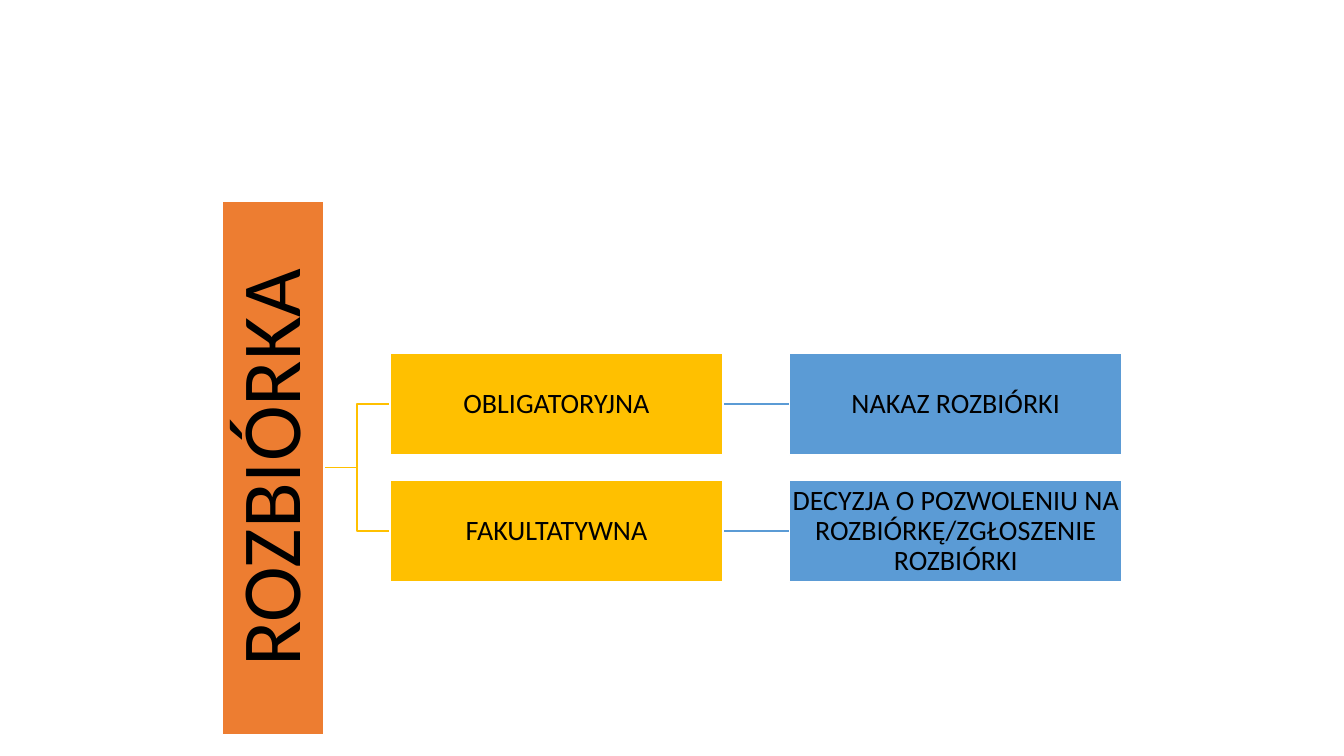
"""Build the slide with the tree of demolition types."""
from dataclasses import dataclass

import pptx
import pptx.chart.data
import pptx.dml.color
import pptx.enum.shapes
import pptx.enum.text
import pptx.oxml.ns
import pptx.util
from lxml import etree
from pptx.util import Inches

HUES = {"root": "ED7D31", "kind": "FFC000", "act": "5B9BD5",
        "edge": "FFFFFF", "text": "000000"}
WIDE, HIGH = 3.3, 1.01
KIND_X, ACT_X = 3.87, 7.83
ROOT_X, ROOT_Y, ROOT_LEN = 2.71, 4.64, 5.29
FIRST, STEP = 4.01, 1.26


@dataclass
class Box:
    """A filled box placed by its centre."""
    text: str
    hue: str
    x: float
    y: float
    wide: float = WIDE
    size: int = 20
    pad: float = 0.01
    turn: int = 0


@dataclass
class Branch:
    """A kind of demolition and the act that orders it."""
    kind: str
    act: str


BRANCHES = [
    Branch("OBLIGATORYJNA", "NAKAZ ROZBIÓRKI"),
    Branch("FAKULTATYWNA",
           "DECYZJA O POZWOLENIU NA ROZBIÓRKĘ/ZGŁOSZENIE ROZBIÓRKI"),
]


def rgb(hue: str) -> pptx.dml.color.RGBColor:
    """Return the named colour."""
    return pptx.dml.color.RGBColor.from_string(HUES[hue])


def draw_box(slide: pptx.slide.Slide, box: Box) -> pptx.shapes.autoshape.Shape:
    """Draw a box with centred text."""
    shape = slide.shapes.add_shape(
        pptx.enum.shapes.MSO_SHAPE.RECTANGLE,
        Inches(box.x - box.wide / 2), Inches(box.y - HIGH / 2),
        Inches(box.wide), Inches(HIGH))
    shape.rotation = box.turn
    shape.shadow.inherit = False
    shape.fill.solid()
    shape.fill.fore_color.rgb = rgb(box.hue)
    shape.line.color.rgb = rgb("edge")
    shape.line.width = pptx.util.Pt(1)
    frame = shape.text_frame
    frame.text = box.text
    frame.word_wrap = True
    frame.vertical_anchor = pptx.enum.text.MSO_ANCHOR.MIDDLE
    frame.margin_left = frame.margin_right = Inches(box.pad)
    frame.margin_top = frame.margin_bottom = Inches(box.pad)
    line = frame.paragraphs[0]
    line.alignment = pptx.enum.text.PP_ALIGN.CENTER
    line.line_spacing = 0.9
    font = line.runs[0].font
    font.name = "Calibri"
    font.size = pptx.util.Pt(box.size)
    font.color.rgb = rgb("text")
    return shape


def draw_link(slide: pptx.slide.Slide, form: pptx.enum.shapes.MSO_CONNECTOR,
              hue: str, x1: float, y1: float, x2: float,
              y2: float) -> pptx.shapes.connector.Connector:
    """Draw a thin link between two points."""
    link = slide.shapes.add_connector(
        form, Inches(x1), Inches(y1), Inches(x2), Inches(y2))
    link.line.color.rgb = rgb(hue)
    link.line.width = pptx.util.Pt(1)
    etree.SubElement(link._element.spPr, pptx.oxml.ns.qn("a:effectLst"))
    return link


def main() -> None:
    """Draw the tree and save it."""
    deck = pptx.Presentation()
    deck.slide_width, deck.slide_height = Inches(13.33), Inches(7.5)
    slide = deck.slides.add_slide(deck.slide_layouts[6])
    forms = pptx.enum.shapes.MSO_CONNECTOR
    rows = [FIRST + STEP * i for i in range(len(BRANCHES))]
    links = []
    for y in rows:
        draw_link(slide, forms.ELBOW, "kind",
                  ROOT_X + HIGH / 2, ROOT_Y, KIND_X, y)
        links.append(draw_link(slide, forms.STRAIGHT, "act",
                               KIND_X + WIDE, y, ACT_X, y))
    draw_box(slide, Box("ROZBIÓRKA", "root", ROOT_X, ROOT_Y,
                        ROOT_LEN, 60, 0.04, 270))
    for branch, link, y in zip(BRANCHES, links, rows):
        kind = draw_box(slide, Box(branch.kind, "kind", KIND_X + WIDE / 2, y))
        act = draw_box(slide, Box(branch.act, "act", ACT_X + WIDE / 2, y))
        link.begin_connect(kind, 3)
        link.end_connect(act, 1)
    deck.save("out.pptx")


if __name__ == "__main__":
    main()
